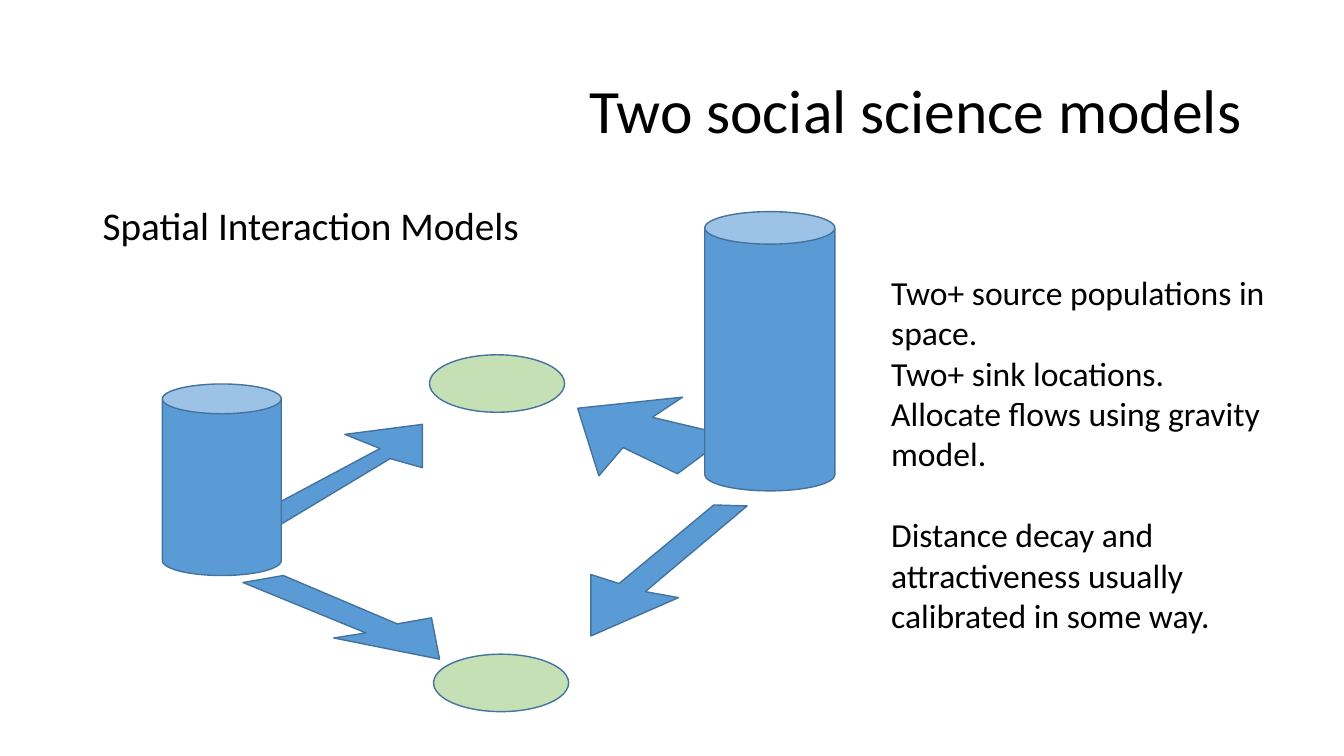
from pptx import Presentation
from pptx.dml.color import RGBColor
from pptx.enum.shapes import MSO_SHAPE
from pptx.enum.text import MSO_ANCHOR, PP_ALIGN
from pptx.util import Inches, Pt

CAN, OVAL = MSO_SHAPE.CAN, MSO_SHAPE.OVAL
TOP, MIDDLE = MSO_ANCHOR.TOP, MSO_ANCHOR.MIDDLE
LEFT, RIGHT = PP_ALIGN.LEFT, PP_ALIGN.RIGHT

BLUE, GREEN, OUTLINE, BLACK = "5B9BD5", "C5E0B4", "43739E", "000000"
FONT = "Calibri"

# Flow arrows, as outline points in inches
FLOWS_BEHIND = [
    [(2.79, 5.2), (3.87, 4.55), (4.19, 4.64), (4.19, 4.21), (3.42, 4.31),
     (3.77, 4.45), (2.59, 5.08), (2.73, 5.29), (2.52, 5.15), (2.65, 5.06)],
    [(6.72, 4.7), (7.23, 4.32), (6.47, 4.14), (6.77, 3.94), (5.73, 4.05),
     (5.94, 4.72), (6.18, 4.44)],
]
FLOWS_FRONT = [
    [(2.41, 5.78), (2.81, 5.71), (3.94, 6.19), (4.28, 6.13), (4.36, 6.54),
     (3.31, 6.33), (3.63, 6.28)],
    [(7.08, 5.01), (6.14, 5.79), (5.86, 5.7), (5.86, 6.31), (6.73, 5.93),
     (6.4, 5.87), (7.41, 5.02)],
]
SOURCES = [(1.61, 3.81, 1.18, 1.9), (6.99, 2.1, 1.29, 2.77)]
SINKS = [(4.26, 3.52, 1.34, 0.57), (4.3, 6.49, 1.34, 0.57)]

NOTES = [
    ("Two+ source populations in space.", {}),
    ("Two+ sink locations.", {}),
    ("Allocate flows using gravity model.", {}),
    ("Distance decay and attractiveness usually calibrated in some way.",
     {"space_before": Pt(29)}),
]


def color(value):
    return RGBColor.from_string(value)


def style(shape, fill):
    shape.shadow.inherit = False
    shape.fill.solid()
    shape.fill.fore_color.rgb = color(fill)
    shape.line.color.rgb = color(OUTLINE)
    shape.line.width = Pt(1)


def add_preset(s, kind, box, fill):
    style(s.shapes.add_shape(kind, *map(Inches, box)), fill)


def add_flow(s, points):
    start, *rest = [(Inches(x), Inches(y)) for x, y in points]
    builder = s.shapes.build_freeform(*start)
    builder.add_line_segments(rest, close=True)
    style(builder.convert_to_shape(), BLUE)


def add_text(s, box, paragraphs, size, anchor=TOP):
    tf = s.shapes.add_textbox(*map(Inches, box)).text_frame
    tf.word_wrap = True
    tf.vertical_anchor = anchor
    for i, (text, formats) in enumerate(paragraphs):
        p = tf.add_paragraph() if i else tf.paragraphs[0]
        for name, value in ({"alignment": LEFT} | formats).items():
            setattr(p, name, value)
        r = p.add_run()
        r.text = text
        for name, value in {"name": FONT, "size": Pt(size)}.items():
            setattr(r.font, name, value)
        r.font.color.rgb = color(BLACK)


def main():
    prs = Presentation()
    prs.slide_width, prs.slide_height = Inches(13.33), Inches(7.5)
    s = prs.slides.add_slide(prs.slide_layouts[6])

    # Flows that start behind a source
    for points in FLOWS_BEHIND:
        add_flow(s, points)

    # Title and subtitle
    add_text(s, (0.92, 0.4, 11.5, 1.45),
             [("Two social science models",
               {"alignment": RIGHT, "line_spacing": 0.9})], 44, MIDDLE)
    add_text(s, (0.92, 2, 11.5, 4.76),
             [("Spatial Interaction Models",
               {"line_spacing": 0.9, "space_before": Pt(10)})], 28)

    # Source populations and sink locations
    for box in SOURCES:
        add_preset(s, CAN, box, BLUE)
    for box in SINKS:
        add_preset(s, OVAL, box, GREEN)

    # Remaining flows
    for points in FLOWS_FRONT:
        add_flow(s, points)

    # Explanation
    add_text(s, (8.74, 2.65, 3.91, 3.74), NOTES, 24)

    prs.save("out.pptx")


if __name__ == "__main__":
    main()
